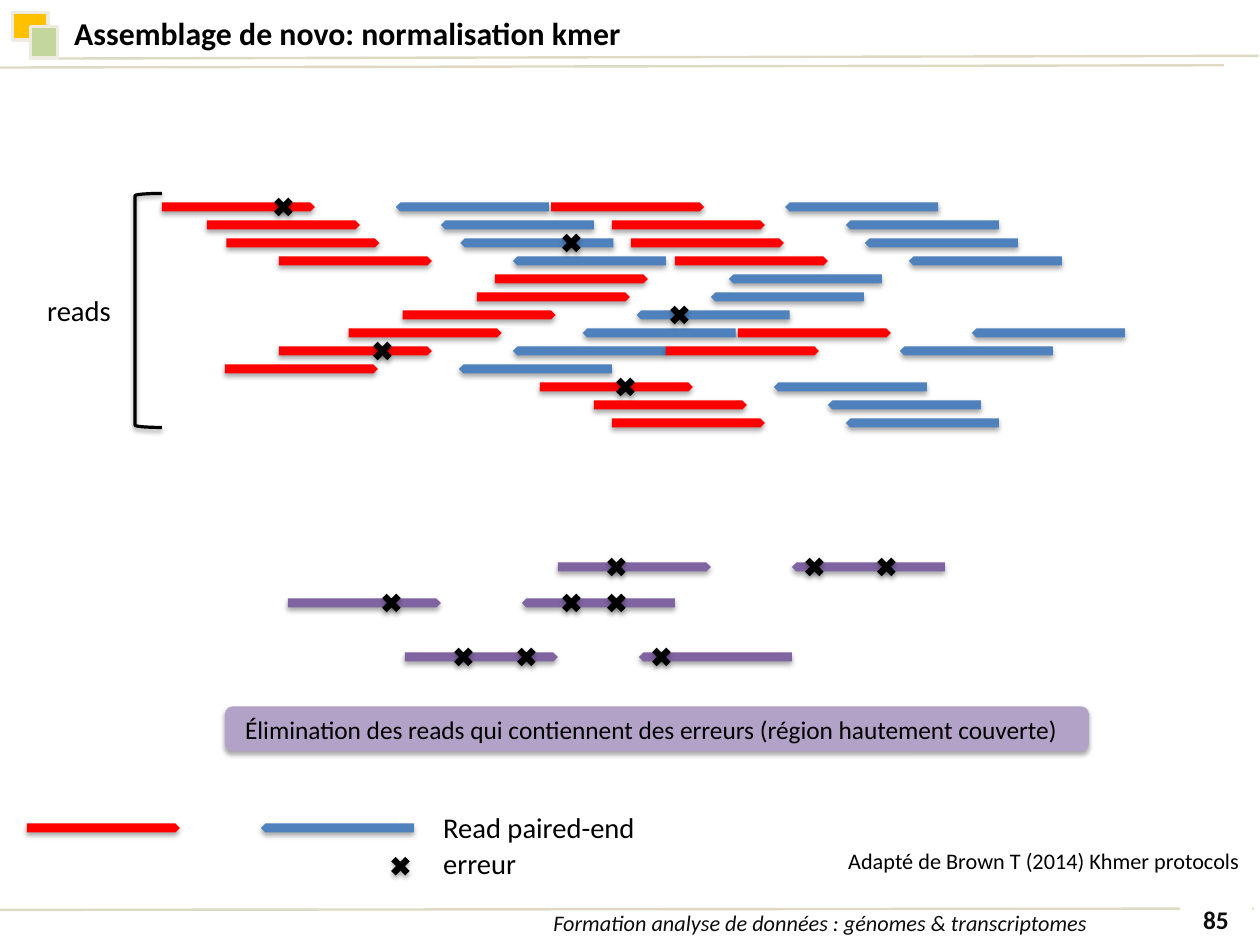
from lxml.etree import SubElement
from pptx import Presentation
from pptx.dml.color import RGBColor
from pptx.enum.shapes import MSO_CONNECTOR, MSO_SHAPE as Preset
from pptx.enum.text import MSO_ANCHOR as Anchor, PP_ALIGN as Align
from pptx.oxml.ns import qn
from pptx.util import Cm, Pt

COLUMNS, ROWS = 28, 21
COLORS = {
    "black": "000000", "ink": "0D0D0D", "white": "FFFFFF", "rule": "DDD9C3",
    "yellow": "FFC000", "green": "C3D69B", "border": "EEECE1",
    "forward": "FF0000", "reverse": "4F81BD", "faulty": "8064A2", "banner": "B3A2C7",
}
RULES = [(1.27, 1.3, 27.97, 1.24), (-0.03, 1.5, 27.2, 1.45)]
FOOTER_RULE = (-0.03, 20.22, 27.86, 20.19)

READ_TOP, READ_STEP = 4.5, 0.4
READ_LENGTH, READ_HEIGHT, MATE_OFFSET, CROSS_SIZE = 3.4, 0.2, 5.2, 0.6
READ_ROWS = [
    [3.6, 12.25], [4.6, 13.6], [5.03, 14.02], [6.2, 15], [11], [10.6], [8.95],
    [7.75, 16.4], [6.2, 14.8], [5], [12], [13.2], [13.6],
]
READ_ERRORS = {0: 6, 2: 12.4, 6: 14.8, 8: 8.2, 10: 13.6}
FAULTY_PAIRS = [
    (12.4, 12.5, [13.4, 19.4, 17.8]),
    (6.4, 13.3, [8.4, 13.4, 12.4]),
    (9, 14.5, [10, 11.4, 14.4]),
]


class ReadsSlide:
    """Draws styled elements on one slide, placed on a grid of 28 columns by 21 rows."""

    def __init__(self, presentation):
        presentation.slide_width, presentation.slide_height = Cm(COLUMNS), Cm(ROWS)
        self.slide = presentation.slides.add_slide(presentation.slide_layouts[6])
        self.font_name = "Calibri"

    def color(self, name):
        return RGBColor.from_string(COLORS[name])

    def rule(self, *ends):
        line = self.slide.shapes.add_connector(MSO_CONNECTOR.STRAIGHT, *map(Cm, ends))
        line.line.color.rgb = self.color("rule")
        line.line.width = Pt(1.5)
        SubElement(line._element.spPr, qn("a:effectLst"))

    def shape(self, preset, box, fill=None, border=None, shadow=True, parent=None):
        shapes = (parent or self.slide).shapes
        shape = shapes.add_shape(preset, *map(Cm, box))
        if fill:
            shape.fill.solid()
            shape.fill.fore_color.rgb = self.color(fill)
        else:
            shape.fill.background()
        if border:
            shape.line.color.rgb = self.color(border)
            shape.line.width = Pt(2)
        else:
            shape.line.fill.background()
        shape.shadow.inherit = False
        if shadow:
            self.drop_shadow(shape)
        return shape

    def drop_shadow(self, shape):
        effects = shape._element.spPr.find(qn("a:effectLst"))
        outer = SubElement(effects, qn("a:outerShdw"), blurRad="40000", dist="23000",
                           dir="5400000", rotWithShape="0")
        tint = SubElement(outer, qn("a:srgbClr"), val=COLORS["black"])
        SubElement(tint, qn("a:alpha"), val="35000")

    def set_text(self, shape, text, size, color="black", bold=False, italic=False,
                 align=Align.LEFT, anchor=Anchor.TOP, spacing=1.0, wrap=True):
        frame = shape.text_frame
        frame.word_wrap = wrap
        frame.vertical_anchor = anchor
        paragraph = frame.paragraphs[0]
        paragraph.text = text
        paragraph.alignment = align
        paragraph.line_spacing = spacing
        font = paragraph.font
        font.name, font.size, font.bold, font.italic = self.font_name, Pt(size), bold, italic
        font.color.rgb = self.color(color)

    def label(self, text, box, size, **style):
        self.set_text(self.slide.shapes.add_textbox(*map(Cm, box)), text, size, **style)

    def footer(self, text, box, size, **style):
        panel = self.shape(Preset.RECTANGLE, box, "white", shadow=False)
        self.set_text(panel, text, size, color="ink", align=Align.CENTER,
                      anchor=Anchor.MIDDLE, spacing=0.9, **style)

    def banner(self, text, box, size):
        panel = self.shape(Preset.ROUNDED_RECTANGLE, box, "banner")
        self.set_text(panel, text, size, anchor=Anchor.MIDDLE)
        panel.text_frame.margin_left = Cm(0.4)

    def cross(self, left, read_top, parent=None):
        top = read_top + (READ_HEIGHT - CROSS_SIZE) / 2
        self.shape(Preset.MATH_MULTIPLY, (left, top, CROSS_SIZE, CROSS_SIZE), "black",
                   parent=parent)

    def pair(self, left, top, colors=("forward", "reverse"), errors=()):
        group = self.slide.shapes.add_group_shape()
        for index, color in enumerate(colors):
            box = (left + index * MATE_OFFSET, top, READ_LENGTH, READ_HEIGHT)
            read = self.shape(Preset.PENTAGON, box, color, parent=group)
            if index:
                read._element.spPr.xfrm.set("flipH", "1")
        for error in errors:
            self.cross(error, top, group)


def main():
    presentation = Presentation()
    page = ReadsSlide(presentation)

    for ends in RULES:
        page.rule(*ends)
    page.shape(Preset.RECTANGLE, (0.28, 0.28, 0.79, 0.61), "yellow", "border", shadow=False)
    page.shape(Preset.RECTANGLE, (0.67, 0.59, 0.61, 0.7), "green", "border", shadow=False)
    page.footer("Formation analyse de données : génomes & transcriptomes",
                (8.83, 20.2, 18.8, 0.68), 14, italic=True)
    page.rule(*FOOTER_RULE)
    page.footer("85", (26.22, 20.1, 1.6, 0.73), 16, bold=True)
    page.label("Assemblage de novo: normalisation kmer", (1.4, 0.18, 19.33, 1.11), 20, bold=True)

    for row, starts in enumerate(READ_ROWS):
        for start in starts:
            page.pair(start, READ_TOP + row * READ_STEP)
    page.label("reads", (0.8, 6.38, 1.95, 1.03), 18, wrap=False)
    page.shape(Preset.LEFT_BRACKET, (3, 4.3, 0.6, 5.2), border="black")
    for row, left in READ_ERRORS.items():
        page.cross(left, READ_TOP + row * READ_STEP)

    for start, top, errors in FAULTY_PAIRS:
        page.pair(start, top, ("faulty", "faulty"), errors)
    page.banner("Élimination des reads qui contiennent des erreurs (région hautement couverte)",
                (5, 15.7, 19.2, 1), 16)

    page.pair(0.6, 18.3)
    page.label("Read paired-end", (9.6, 17.88, 4.83, 1.03), 18, wrap=False)
    page.cross(8.6, 19.15)
    page.label("erreur", (9.6, 18.68, 2.15, 1.03), 18, wrap=False)
    page.label("Adapté de Brown T (2014) Khmer protocols", (18.6, 18.7, 9.3, 0.85), 14, wrap=False)

    presentation.save("out.pptx")


if __name__ == "__main__":
    main()
